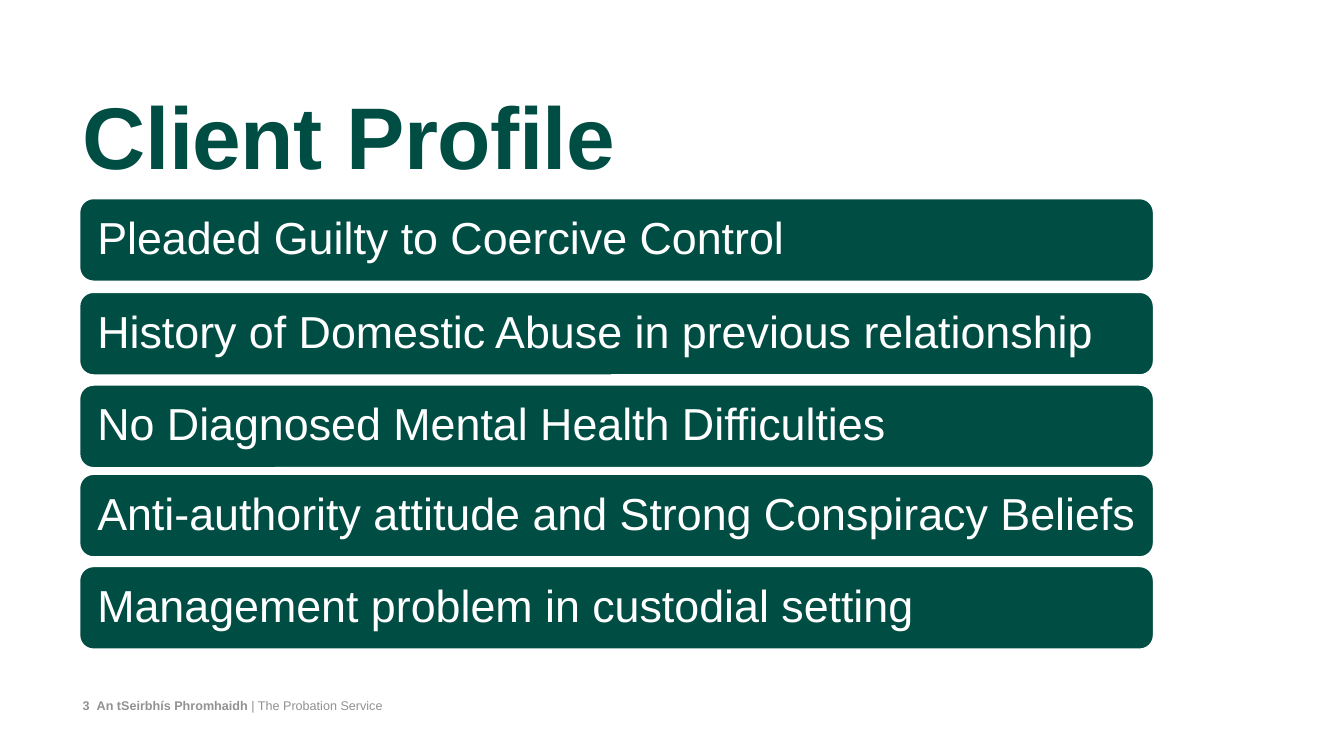
"""Build the Client Profile slide."""
import pptx
import pptx.dml.color
import pptx.enum.shapes
import pptx.enum.text
import pptx.oxml
import pptx.oxml.ns
import pptx.util

Inches = pptx.util.Inches
Pt = pptx.util.Pt
ANCHOR = pptx.enum.text.MSO_ANCHOR
GREEN, WHITE, GREY = "004D44", "FFFFFF", "929292"
LEFT = 1.58
BARS = [
    (3.94, "Pleaded Guilty to Coercive Control"),
    (5.8, "History of Domestic Abuse in previous relationship"),
    (7.64, "No Diagnosed Mental Health Difficulties"),
    (9.41, "Anti-authority attitude and Strong Conspiracy Beliefs"),
    (11.24, "Management problem in custodial setting"),
]


def rgb(value):
    """Turn a hex string into a colour."""
    return pptx.dml.color.RGBColor.from_string(value)


def set_all(obj, values):
    """Set attributes of an object from a dict."""
    for name, value in values.items():
        setattr(obj, name, value)


def set_frame(tf, anchor, left, top, right, bottom):
    """Set the wrapping, anchor and margins of a text frame."""
    set_all(tf, {
        "word_wrap": True,
        "auto_size": pptx.enum.text.MSO_AUTO_SIZE.NONE,
        "vertical_anchor": anchor,
        "margin_left": Inches(left),
        "margin_top": Inches(top),
        "margin_right": Inches(right),
        "margin_bottom": Inches(bottom),
    })


def add_run(p, text, size, color, bold=False):
    """Add a formatted run to a paragraph."""
    r = p.add_run()
    r.text = text
    set_all(r.font, {"name": "Arial", "size": Pt(size), "bold": bold})
    r.font.color.rgb = rgb(color)
    return r


def set_paragraph(p, line_spacing):
    """Align a paragraph left with the given line spacing."""
    set_all(p, {
        "alignment": pptx.enum.text.PP_ALIGN.LEFT,
        "line_spacing": line_spacing,
        "space_before": Pt(0),
    })


def add_title(s, text):
    """Place and fill the title placeholder."""
    sp = s.shapes.title
    set_all(sp, {"left": Inches(LEFT), "top": Inches(1.33),
                 "width": Inches(21.62), "height": Inches(2.44)})
    set_frame(sp.text_frame, ANCHOR.BOTTOM, 0.06, 0.06, 0.06, 0.06)
    p = sp.text_frame.paragraphs[0]
    set_paragraph(p, 1.1)
    r = add_run(p, text, 125, GREEN, True)
    r.font._element.set("spc", "-80")


def add_bar(s, top, text):
    """Add a rounded bar with its statement."""
    sp = s.shapes.add_shape(
        pptx.enum.shapes.MSO_SHAPE.ROUNDED_RECTANGLE,
        Inches(LEFT), Inches(top), Inches(21.31), Inches(1.64))
    sp.shadow.inherit = False
    sp.fill.solid()
    sp.fill.fore_color.rgb = rgb(GREEN)
    sp.line.color.rgb = rgb(WHITE)
    sp.line.width = Pt(2)
    set_frame(sp.text_frame, ANCHOR.MIDDLE, 0.27, 0.27, 0.1, 0.27)
    p = sp.text_frame.paragraphs[0]
    set_paragraph(p, 0.9)
    add_run(p, text, 64, WHITE)


def add_tab(p, position):
    """Add a left tab stop to a paragraph."""
    tabs = pptx.oxml.parse_xml(
        f'<a:tabLst {pptx.oxml.ns.nsdecls("a")}>'
        f'<a:tab pos="{Inches(position)}" algn="l"/></a:tabLst>')
    p._p.get_or_add_pPr().append(tabs)


def add_footer(s, number, bold_text, text):
    """Add the footer line with the slide number."""
    sp = s.shapes.add_textbox(
        Inches(LEFT), Inches(13.79), Inches(6.42), Inches(0.42))
    set_frame(sp.text_frame, ANCHOR.MIDDLE, 0.06, 0.06, 0.06, 0.06)
    p = sp.text_frame.paragraphs[0]
    add_tab(p, 0.28)
    add_run(p, f"{number}\t{bold_text} ", 18, GREY, True)
    add_run(p, text, 18, GREY)


def main():
    """Build and save the presentation."""
    prs = pptx.Presentation()
    set_all(prs, {"slide_width": Inches(26.67), "slide_height": Inches(15)})
    s = prs.slides.add_slide(prs.slide_layouts.get_by_name("Title Only"))
    add_footer(s, 3, "An tSeirbhís Phromhaidh", "| The Probation Service")
    add_title(s, "Client Profile")
    for top, text in BARS:
        add_bar(s, top, text)
    prs.save("out.pptx")


if __name__ == "__main__":
    main()
